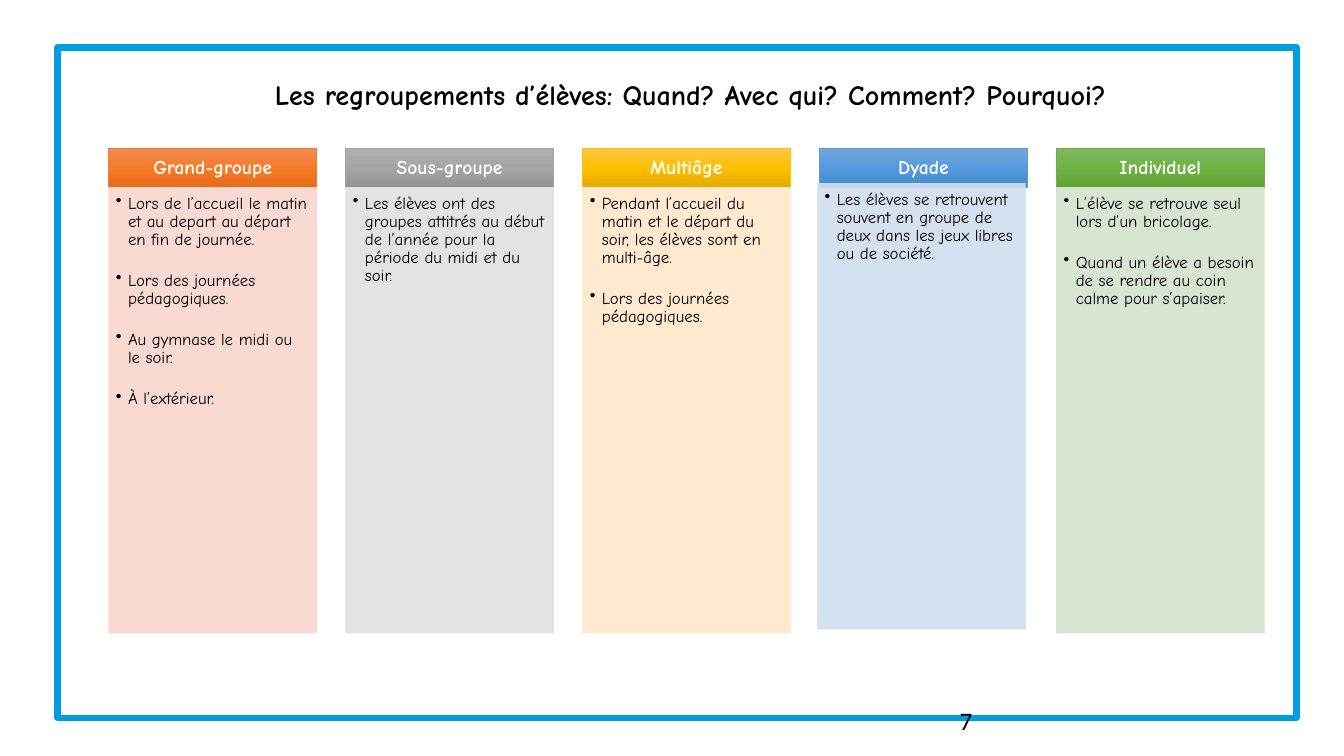
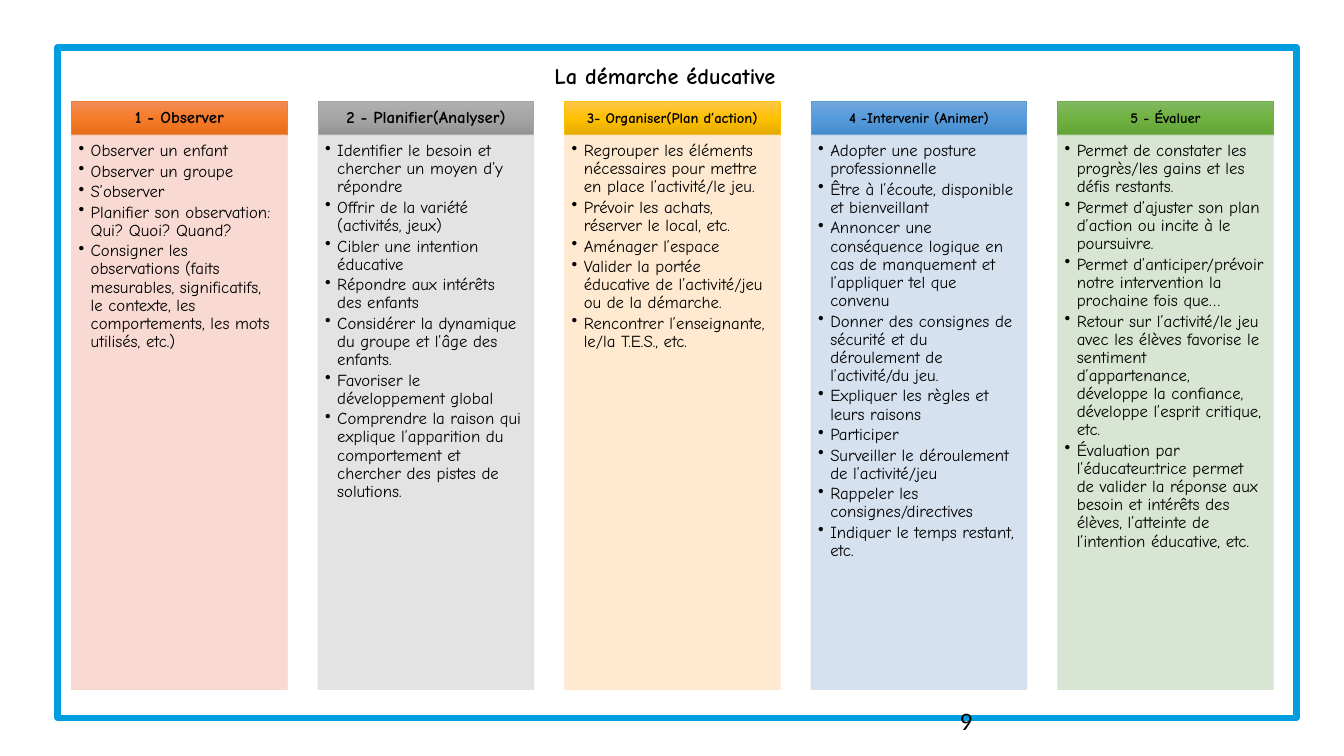
from copy import deepcopy
from dataclasses import dataclass

from lxml.etree import SubElement
from pptx import Presentation
from pptx.dml.color import RGBColor
from pptx.enum.shapes import MSO_SHAPE as SHAPE
from pptx.enum.text import MSO_ANCHOR as ANCHOR, MSO_AUTO_SIZE as AUTO, PP_ALIGN as ALIGN
from pptx.oxml.ns import qn
from pptx.shapes.autoshape import Shape
from pptx.slide import Slide, SlideLayout
from pptx.text.text import TextFrame
from pptx.util import Inches, Pt


@dataclass(frozen=True)
class Accent:
    line: str
    stops: tuple[str, str, str]
    pale: str


@dataclass(frozen=True)
class Theme:
    font: str = "Comic Neue"
    number_font: str = "Calibri"
    black: str = "000000"
    white: str = "FFFFFF"
    frame: str = "009EDE"
    body_size: float = 12
    small_size: float = 10.5
    number_size: float = 18
    bullet_gap: float = 1.7
    accents: tuple[Accent, ...] = (
        Accent("ED7D31", ("F18C57", "F67B28", "E56C19"), "F8D7CE"),
        Accent("A5A5A5", ("AFAFAF", "A5A5A5", "939393"), "E1E1E1"),
        Accent("FFC000", ("FFC64B", "FFC000", "E3AB00"), "FFE8CC"),
        Accent("5B9BD5", ("71A6DB", "559BDB", "448ACA"), "D2DEEF"),
        Accent("70AD47", ("81B861", "6FB242", "62A336"), "D5E3CF"),
    )


THEME = Theme()


@dataclass(frozen=True)
class Box:
    x: float
    y: float
    w: float
    h: float

    def emu(self) -> tuple[int, int, int, int]:
        return Inches(self.x), Inches(self.y), Inches(self.w), Inches(self.h)


@dataclass(frozen=True)
class Column:
    head: str
    bullets: tuple[str, ...]
    size: float = THEME.body_size
    dx: float = 0  # shift of the body panel
    dy: float = 0


@dataclass(frozen=True)
class Grid:
    left: float
    right: float
    top: float
    width: float
    head_h: float
    body_h: float
    head_color: str
    head_inset: tuple[float, float]
    gap: float  # points after each bullet


@dataclass(frozen=True)
class Page:
    title: str
    title_box: Box
    title_size: float
    number: str
    grid: Grid
    columns: tuple[Column, ...]


PAGES = (
    Page("Les regroupements d’élèves: Quand? Avec qui? Comment? Pourquoi?",
         Box(0.95, 0.71, 11.8, 0.5), 20, "7",
         Grid(1.08, 12.54, 1.47, 2.06, 0.39, 4.42, THEME.white, (0.11, 0.06), 16.3),
         (
             Column("Grand-groupe", (
                 "Lors de l’accueil le matin et au depart au départ en fin de journée.",
                 "Lors des journées pédagogiques.",
                 "Au gymnase le midi ou le soir.",
                 "À l’extérieur."), 14),
             Column("Sous-groupe", (
                 "Les élèves ont des groupes attitrés au début de l’année pour la "
                 "période du midi et du soir.",), 14),
             Column("Multiâge", (
                 "Pendant l’accueil du matin et le départ du soir, les élèves sont en multi-âge.",
                 "Lors des journées pédagogiques."), 14),
             Column("Dyade", (
                 "Les élèves se retrouvent souvent en groupe de deux dans les jeux "
                 "libres ou de société.",), 14, -0.02, -0.04),
             Column("Individuel", (
                 "L’élève se retrouve seul lors d’un bricolage.",
                 "Quand un élève a besoin de se rendre au coin calme pour s’apaiser."), 14),
         )),
    Page("La démarche éducative",
         Box(0.6, 0.52, 11.99, 0.5), 16, "9",
         Grid(0.71, 12.63, 1.01, 2.14, 0.33, 5.5, THEME.black, (0.09, 0.05), THEME.bullet_gap),
         (
             Column("1 - Observer", (
                 "Observer un enfant",
                 "Observer un groupe",
                 "S’observer",
                 "Planifier son observation: Qui? Quoi? Quand?",
                 "Consigner les observations (faits mesurables, significatifs, le "
                 "contexte, les comportements, les mots utilisés, etc.)")),
             Column("2 - Planifier(Analyser)", (
                 "Identifier le besoin et chercher un moyen d’y répondre",
                 "Offrir de la variété (activités, jeux)",
                 "Cibler une intention éducative",
                 "Répondre aux intérêts des enfants",
                 "Considérer la dynamique du groupe et l’âge des enfants.",
                 "Favoriser le développement global",
                 "Comprendre la raison qui explique l’apparition du comportement et "
                 "chercher des pistes de solutions.")),
             Column("3- Organiser(Plan d’action)", (
                 "Regrouper les éléments nécessaires pour mettre en place l’activité/le jeu.",
                 "Prévoir les achats, réserver le local, etc.",
                 "Aménager l’espace",
                 "Valider la portée éducative de l’activité/jeu ou de la démarche.",
                 "Rencontrer l’enseignante, le/la T.E.S., etc."), THEME.small_size),
             Column("4 -Intervenir (Animer)", (
                 "Adopter une posture professionnelle",
                 "Être à l’écoute, disponible et bienveillant",
                 "Annoncer une conséquence logique en cas de manquement et "
                 "l’appliquer tel que convenu",
                 "Donner des consignes de sécurité et du déroulement de l’activité/du jeu.",
                 "Expliquer les règles et leurs raisons",
                 "Participer",
                 "Surveiller le déroulement de l’activité/jeu",
                 "Rappeler les consignes/directives",
                 "Indiquer le temps restant, etc."), THEME.small_size),
             Column("5 - Évaluer", (
                 "Permet de constater les progrès/les gains et les défis restants.",
                 "Permet d’ajuster son plan d’action ou incite à le poursuivre.",
                 "Permet d’anticiper/prévoir notre intervention la prochaine fois que…",
                 "Retour sur l’activité/le jeu avec les élèves favorise le sentiment "
                 "d’appartenance, développe la confiance, développe l’esprit critique, etc.",
                 "Évaluation par l’éducateur.trice permet de valider la réponse aux "
                 "besoin et intérêts des élèves, l’atteinte de l’intention éducative, etc."),
                 THEME.small_size),
         )),
)


# Text and shape helpers
def write(tf: TextFrame, *lines: str, size: float, color: str = THEME.black,
          font: str = THEME.font, bold: bool = False, align: ALIGN = ALIGN.LEFT,
          anchor: ANCHOR = ANCHOR.TOP, spacing: float = 0.9, after: float = 0,
          inset: tuple[float, ...] = (0.1, 0.05, 0.1, 0.05), bullet: bool = False) -> None:
    tf.word_wrap, tf.auto_size, tf.vertical_anchor = True, AUTO.NONE, anchor
    tf.margin_left, tf.margin_top, tf.margin_right, tf.margin_bottom = map(Inches, inset)
    for i, line in enumerate(lines):
        p = tf.add_paragraph() if i else tf.paragraphs[0]
        p.alignment, p.line_spacing = align, spacing
        p.space_before, p.space_after = Pt(0), Pt(after)
        if bullet:
            pPr = p._p.get_or_add_pPr()
            pPr.set("marL", str(Inches(0.12)))
            pPr.set("indent", str(-Inches(0.12)))
            SubElement(pPr, qn("a:buChar")).set("char", "•")
        r = p.add_run()
        r.text = line
        r.font.name, r.font.size, r.font.bold = font, Pt(size), bold
        r.font.color.rgb = RGBColor.from_string(color)


def add_rect(s: Slide, box: Box, line: str, width: float) -> Shape:
    sp = s.shapes.add_shape(SHAPE.RECTANGLE, *box.emu())
    sp.shadow.inherit = False
    sp.line.color.rgb = RGBColor.from_string(line)
    sp.line.width = Pt(width)
    return sp


def fill_gradient(sp: Shape, colors: tuple[str, ...]) -> None:
    sp.fill.gradient()
    sp.fill.gradient_angle = 270
    stops = sp.element.spPr.find(".//" + qn("a:gsLst"))
    stops.append(deepcopy(stops[-1]))
    for i, (stop, color) in enumerate(zip(sp.fill.gradient_stops, colors)):
        stop.position = i / 2
        stop.color.rgb = RGBColor.from_string(color)


def fill_pale(sp: Shape, color: str) -> None:
    sp.fill.solid()
    sp.fill.fore_color.rgb = RGBColor.from_string(color)
    for clr in sp.element.spPr.iter(qn("a:srgbClr")):
        SubElement(clr, qn("a:alpha")).set("val", "90000")


# Slide parts
def add_frame(s: Slide, layout: SlideLayout) -> None:
    sp = add_rect(s, Box(0.57, 0.47, 12.29, 6.65), THEME.frame, 4.5)
    sp.fill.background()
    layout.shapes.element.append(sp.element)  # shared by every slide


def add_title(s: Slide, page: Page) -> None:
    title = s.shapes.title
    title.left, title.top, title.width, title.height = page.title_box.emu()
    write(title.text_frame, page.title, size=page.title_size, bold=True,
          align=ALIGN.CENTER, anchor=ANCHOR.MIDDLE)


def add_columns(s: Slide, g: Grid, columns: tuple[Column, ...]) -> None:
    pitch = (g.right - g.left - g.width) / (len(columns) - 1)
    for i, (col, accent) in enumerate(zip(columns, THEME.accents)):
        x = g.left + i * pitch
        head = add_rect(s, Box(x, g.top, g.width, g.head_h), accent.line, 0.5)
        fill_gradient(head, accent.stops)
        write(head.text_frame, col.head, size=col.size, color=g.head_color, bold=True,
              align=ALIGN.CENTER, anchor=ANCHOR.MIDDLE, inset=g.head_inset * 2)
        body = add_rect(s, Box(x + col.dx, g.top + g.head_h + col.dy, g.width, g.body_h),
                        accent.pale, 0.5)
        fill_pale(body, accent.pale)
        write(body.text_frame, *col.bullets, size=THEME.body_size, after=g.gap,
              inset=(0.07, 0.07, 0.09, 0.1), bullet=True)


def add_number(s: Slide, number: str) -> None:
    tb = s.shapes.add_textbox(*Box(9.42, 6.95, 3, 0.4).emu())
    write(tb.text_frame, number, size=THEME.number_size, font=THEME.number_font, spacing=1)


def main() -> None:
    prs = Presentation()
    prs.slide_width, prs.slide_height = Inches(13.33), Inches(7.5)
    layout = prs.slide_layouts[5]
    for i, page in enumerate(PAGES):
        s = prs.slides.add_slide(layout)
        if i == 0:
            add_frame(s, layout)
        add_title(s, page)
        add_columns(s, page.grid, page.columns)
        add_number(s, page.number)
    prs.save("out.pptx")


if __name__ == "__main__":
    main()
